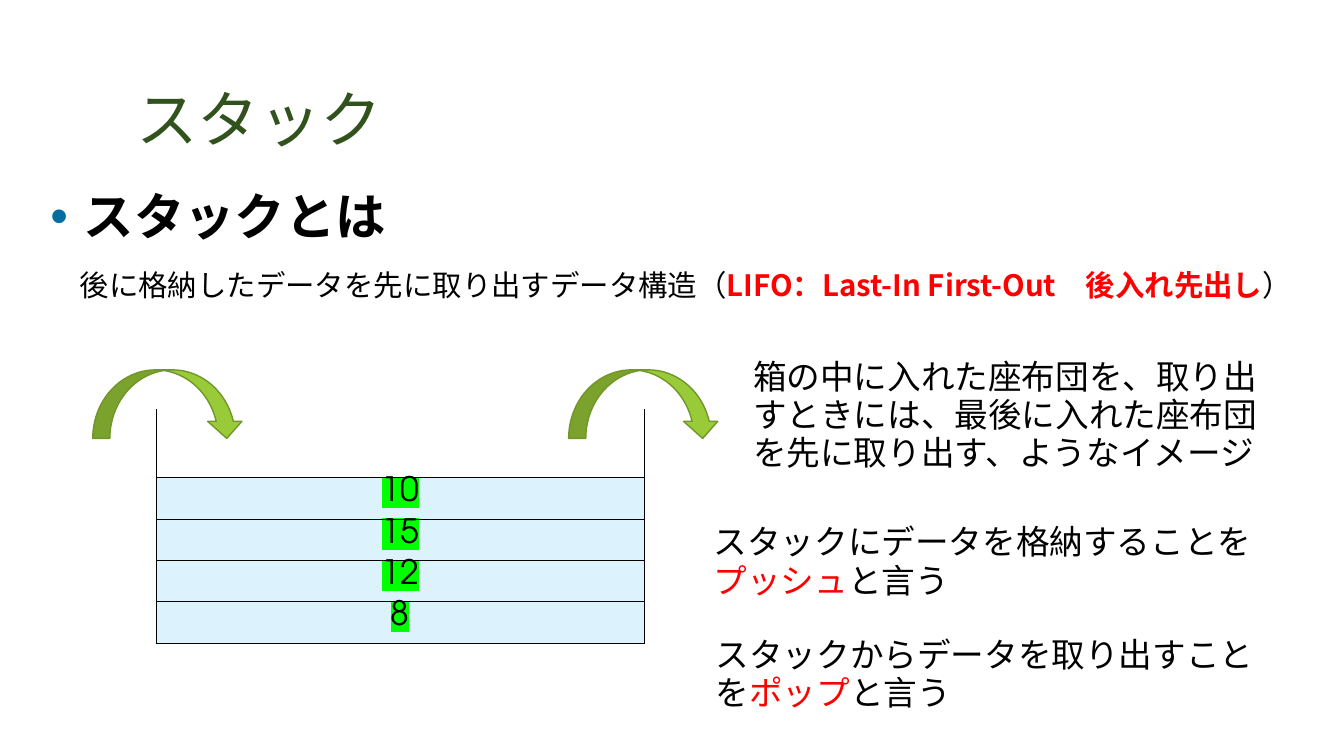
from lxml.etree import SubElement
from pptx import Presentation
from pptx.dml.color import RGBColor
from pptx.enum.shapes import MSO_CONNECTOR, MSO_SHAPE
from pptx.enum.text import MSO_ANCHOR, MSO_AUTO_SIZE, PP_ALIGN
from pptx.oxml.ns import qn
from pptx.util import Inches, Pt

COLORS = {
    "title": "31521C", "text": "000000", "key": "FF0000", "bullet": "056EA0",
    "cell": "DCF3FE", "mark": "00FF00", "arrow": "99CB38", "edge": "719629",
}
SANS, GEOMETRIC = "Noto Sans CJK JP", "TeX Gyre Adventor"
WIDTH, HEIGHT = Inches(13.33), Inches(7.5)
STACK = ["10", "15", "12", "8"]
STACK_LEFT, STACK_TOP, STACK_WIDTH, STACK_ROW = 11.63, 63.2, 36.31, 5.47
WALL_TOP = 54.13


def across(share):
    """Turn a percentage of the slide's width into a length."""
    return round(WIDTH * share / 100)


def down(share):
    """Turn a percentage of the slide's height into a length."""
    return round(HEIGHT * share / 100)


def place(left, top, width, height):
    """Turn four percentages into left, top, width and height."""
    return across(left), down(top), across(width), down(height)


def color(name):
    """Look up a named colour."""
    return RGBColor.from_string(COLORS[name])


def add_hex(parent, name):
    """Append a named colour to an XML fill element."""
    SubElement(parent, qn("a:srgbClr"), val=COLORS[name])


def add_span(para, text, size, tint="text", font=SANS, bold=False, mark=None):
    """Add one formatted run to a paragraph."""
    span = para.add_run()
    span.text = text
    span.font.size, span.font.bold = Pt(size), bold
    span.font.color.rgb = color(tint)
    props = span.font._element
    if mark:
        add_hex(SubElement(props, qn("a:highlight")), mark)
    span.font.name = font
    SubElement(props, qn("a:ea"), typeface=SANS)


def set_frame(frame, side, edge, anchor=MSO_ANCHOR.TOP):
    """Set wrapping, insets and anchor of a text frame."""
    frame.word_wrap = True
    frame.auto_size = MSO_AUTO_SIZE.NONE
    frame.vertical_anchor = anchor
    frame.margin_left = frame.margin_right = Inches(side)
    frame.margin_top = frame.margin_bottom = Inches(edge)


def set_indent(para, left, first):
    """Set the left margin and first-line indent of a paragraph."""
    props = para._p.get_or_add_pPr()
    props.set("marL", str(Inches(left)))
    props.set("indent", str(Inches(first)))
    return props


def add_title(page, text):
    """Fill and place the title placeholder."""
    title = page.shapes.title
    title.left, title.top, title.width, title.height = place(9.15, 1.07, 83.35, 20.4)
    set_frame(title.text_frame, 0.13, 0.07, MSO_ANCHOR.BOTTOM)
    para = title.text_frame.paragraphs[0]
    para.alignment, para.line_spacing = PP_ALIGN.LEFT, 0.85
    add_span(para, text, 44, "title")


def add_definition(page):
    """Add the bulleted heading and the definition under it."""
    frame = page.shapes.add_textbox(*place(2.78, 24.8, 94.52, 16.8)).text_frame
    set_frame(frame, 0.13, 0.07)
    heading, meaning = frame.paragraphs[0], frame.add_paragraph()
    for para in (heading, meaning):
        para.line_spacing, para.space_before = 0.85, Pt(18.7)
    props = set_indent(heading, 0.33, -0.33)
    add_hex(SubElement(props, qn("a:buClr")), "bullet")
    SubElement(props, qn("a:buFont"), typeface="Arial")
    SubElement(props, qn("a:buChar"), char="•")
    add_span(heading, "スタックとは", 36, bold=True)
    set_indent(meaning, 0, 0.29)
    add_span(meaning, "後に格納したデータを先に取り出すデータ構造（", 21)
    add_span(meaning, "LIFO：Last-In First-Out　後入れ先出し", 21, "key", bold=True)
    add_span(meaning, "）", 21)


def add_note(page, area, *spans):
    """Add a text box of (text, colour) spans."""
    frame = page.shapes.add_textbox(*place(*area)).text_frame
    set_frame(frame, 0.1, 0.05)
    para = frame.paragraphs[0]
    para.line_spacing = 0.95
    for text, tint in spans:
        add_span(para, text, 24, tint, GEOMETRIC)


def format_cell(cell, value):
    """Write a value into a bordered, filled cell."""
    cell.margin_top = cell.margin_bottom = Inches(0.04)
    para = cell.text_frame.paragraphs[0]
    para.alignment, para.line_spacing = PP_ALIGN.CENTER, 0.8
    add_span(para, value, 24, font=GEOMETRIC, mark="mark")
    props = cell._tc.get_or_add_tcPr()
    for side in ("a:lnL", "a:lnR", "a:lnT", "a:lnB"):
        border = SubElement(props, qn(side), w=str(Pt(1)))
        add_hex(SubElement(border, qn("a:solidFill")), "text")
    cell.fill.solid()
    cell.fill.fore_color.rgb = color("cell")


def add_stack(page):
    """Add the table that shows the stacked values."""
    area = place(STACK_LEFT, STACK_TOP, STACK_WIDTH, STACK_ROW * len(STACK))
    table = page.shapes.add_table(len(STACK), 1, *area).table
    table.first_row = table.horz_banding = False
    for index, value in enumerate(STACK):
        table.rows[index].height = down(STACK_ROW)
        format_cell(table.cell(index, 0), value)


def add_wall(page, left):
    """Add one upright side of the open box."""
    x = across(left)
    wall = page.shapes.add_connector(
        MSO_CONNECTOR.STRAIGHT, x, down(STACK_TOP), x, down(WALL_TOP))
    wall.line.color.rgb, wall.line.width = color("text"), Pt(1)
    SubElement(wall._element.spPr, qn("a:effectLst"))


def add_arrow(page, left):
    """Add a curved arrow over a side of the box."""
    arrow = page.shapes.add_shape(
        MSO_SHAPE.CURVED_DOWN_ARROW, *place(left, 48.93, 11.25, 9.07))
    arrow.shadow.inherit = False
    arrow.fill.solid()
    arrow.fill.fore_color.rgb = color("arrow")
    arrow.line.color.rgb, arrow.line.width = color("edge"), Pt(1)


def main():
    """Build the slide and save it."""
    deck = Presentation()
    deck.slide_width, deck.slide_height = WIDTH, HEIGHT
    page = deck.slides.add_slide(deck.slide_layouts[5])
    add_title(page, "スタック")
    add_definition(page)
    add_stack(page)
    for left in (STACK_LEFT, STACK_LEFT + STACK_WIDTH):
        add_wall(page, left)
    for left in (6.9, 42.31):
        add_arrow(page, left)
    add_note(page, (55.29, 46.8, 40.14, 16.67),
             ("箱の中に入れた座布団を、取り出すときには、"
              "最後に入れた座布団を先に取り出す、ようなイメージ", "text"))
    add_note(page, (52.36, 68.67, 43.14, 11.6),
             ("スタックにデータを格納することを", "text"),
             ("プッシュ", "key"), ("と言う", "text"))
    add_note(page, (52.51, 83.6, 43.14, 11.6),
             ("スタックからデータを取り出すことを", "text"),
             ("ポップ", "key"), ("と言う", "text"))
    deck.save("out.pptx")


if __name__ == "__main__":
    main()
